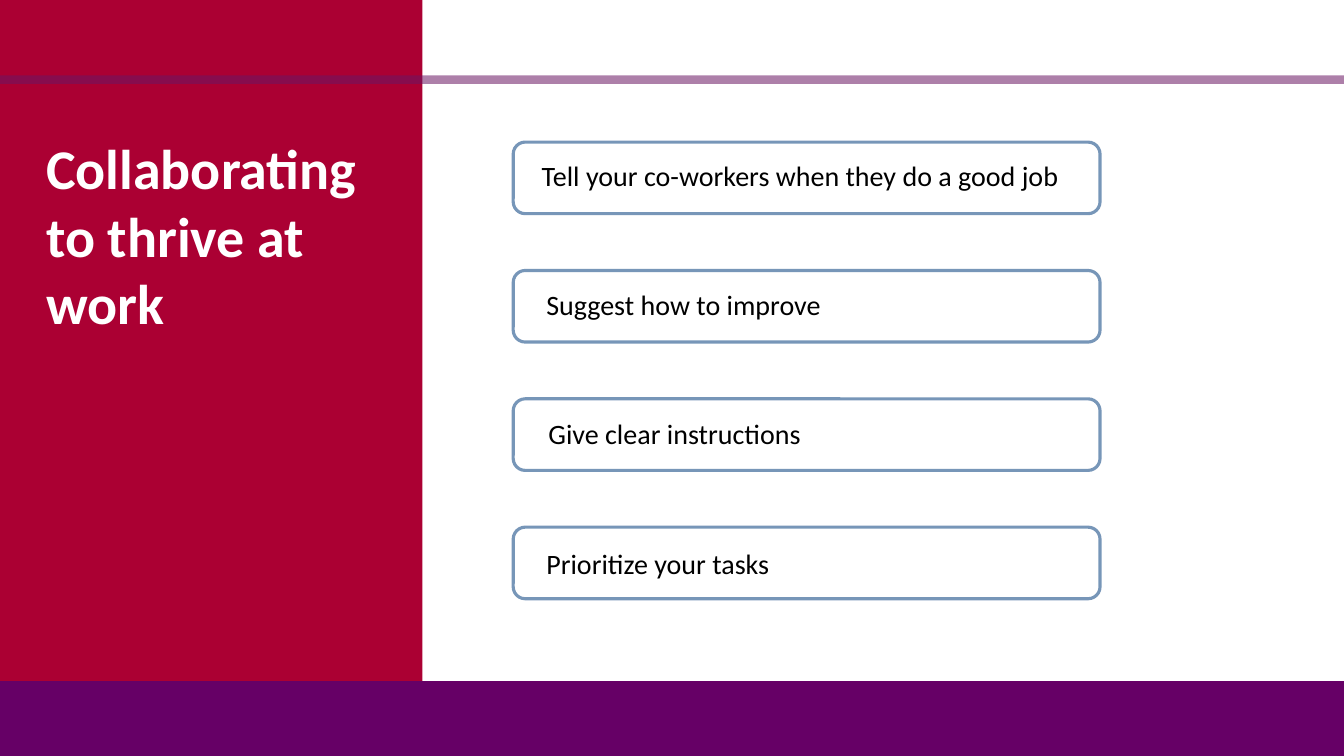
from lxml.etree import SubElement
from pptx import Presentation
from pptx.dml.color import RGBColor
from pptx.enum.shapes import MSO_CONNECTOR as Connector, MSO_SHAPE as Preset
from pptx.enum.text import MSO_AUTO_SIZE as AutoSize, PP_ALIGN as Align
from pptx.oxml.ns import qn
from pptx.util import Inches, Pt

WIDTH, HEIGHT = 13.33, 7.5
CRIMSON, PURPLE, PLUM, BLUE = "AB0033", "660066", "6B1664", "316094"
WHITE, BLACK = "FFFFFF", "000000"
TIPS = [
    ("Tell your co-workers when they do a good job", 5.19, 5.49, Align.CENTER),
    ("Suggest how to improve", 5.32, 4.56, Align.LEFT),
    ("Give clear instructions", 5.34, 5.22, Align.LEFT),
    ("Prioritize your tasks", 5.32, 5.18, Align.LEFT),
]


def paint(color_format, color, alpha=None):
    color_format.rgb = RGBColor.from_string(color)
    if alpha is not None:
        target = color_format._xFill.find(qn("a:srgbClr"))
        SubElement(target, qn("a:alpha")).set("val", str(alpha * 1000))


def draw_line(line, color, width, alpha=None):
    line.width = Pt(width)
    line.fill.solid()
    paint(line.fill.fore_color, color, alpha)


def add_box(page, box, preset=Preset.RECTANGLE, fill=None):
    shape = page.shapes.add_shape(preset, *map(Inches, box))
    shape.shadow.inherit = False
    if fill:
        shape.fill.solid()
        paint(shape.fill.fore_color, fill)
    else:
        shape.fill.background()
    shape.line.fill.background()
    return shape


def add_text(page, box, text, size=20, color=BLACK, bold=False, align=Align.LEFT):
    frame = page.shapes.add_textbox(*map(Inches, box)).text_frame
    frame.word_wrap = True
    frame.auto_size = AutoSize.SHAPE_TO_FIT_TEXT
    para = frame.paragraphs[0]
    para.alignment = align
    span = para.add_run()
    span.text = text
    span.font.name = "Calibri"
    span.font.size = Pt(size)
    span.font.bold = bold
    paint(span.font.color, color)


def add_title_panel(page, box):
    left, top, width, height = box
    add_box(page, box, fill=CRIMSON)
    title_box = (left + 0.36, top + 1.28, width - 0.5, 2.12)
    add_text(page, title_box, "Collaborating to thrive at work",
             size=40, color=WHITE, bold=True)


def add_footer(page, box):
    band = add_box(page, box, fill=PURPLE)
    draw_line(band.line, PURPLE, 1)


def add_rule(page, left, top, width):
    rule = page.shapes.add_connector(
        Connector.STRAIGHT, Inches(left), Inches(top), Inches(left + width), Inches(top))
    SubElement(rule._element.spPr, qn("a:effectLst"))
    draw_line(rule.line, PLUM, 6, alpha=55)


def add_tips(page, box, card_height=0.71):
    left, top, width, height = box
    pitch = (height - card_height) / (len(TIPS) - 1)
    for row, (tip, text_left, text_width, align) in enumerate(TIPS):
        card_top = top + row * pitch
        text_top = card_top + 0.11 + row * 0.01
        add_text(page, (text_left, text_top, text_width, 0.44), tip, align=align)
        card = add_box(page, (left, card_top, width, card_height), Preset.ROUNDED_RECTANGLE)
        draw_line(card.line, BLUE, 2.25, alpha=65)


def main():
    deck = Presentation()
    deck.slide_width, deck.slide_height = Inches(WIDTH), Inches(HEIGHT)
    page = deck.slides.add_slide(deck.slide_layouts[6])
    footer_top = 6.76
    add_title_panel(page, (0, 0, 4.19, HEIGHT))
    add_footer(page, (0, footer_top, WIDTH, HEIGHT - footer_top))
    add_rule(page, 0, 0.79, WIDTH)
    add_tips(page, (5.09, 1.41, 5.82, 4.53))
    deck.save("out.pptx")


if __name__ == "__main__":
    main()
